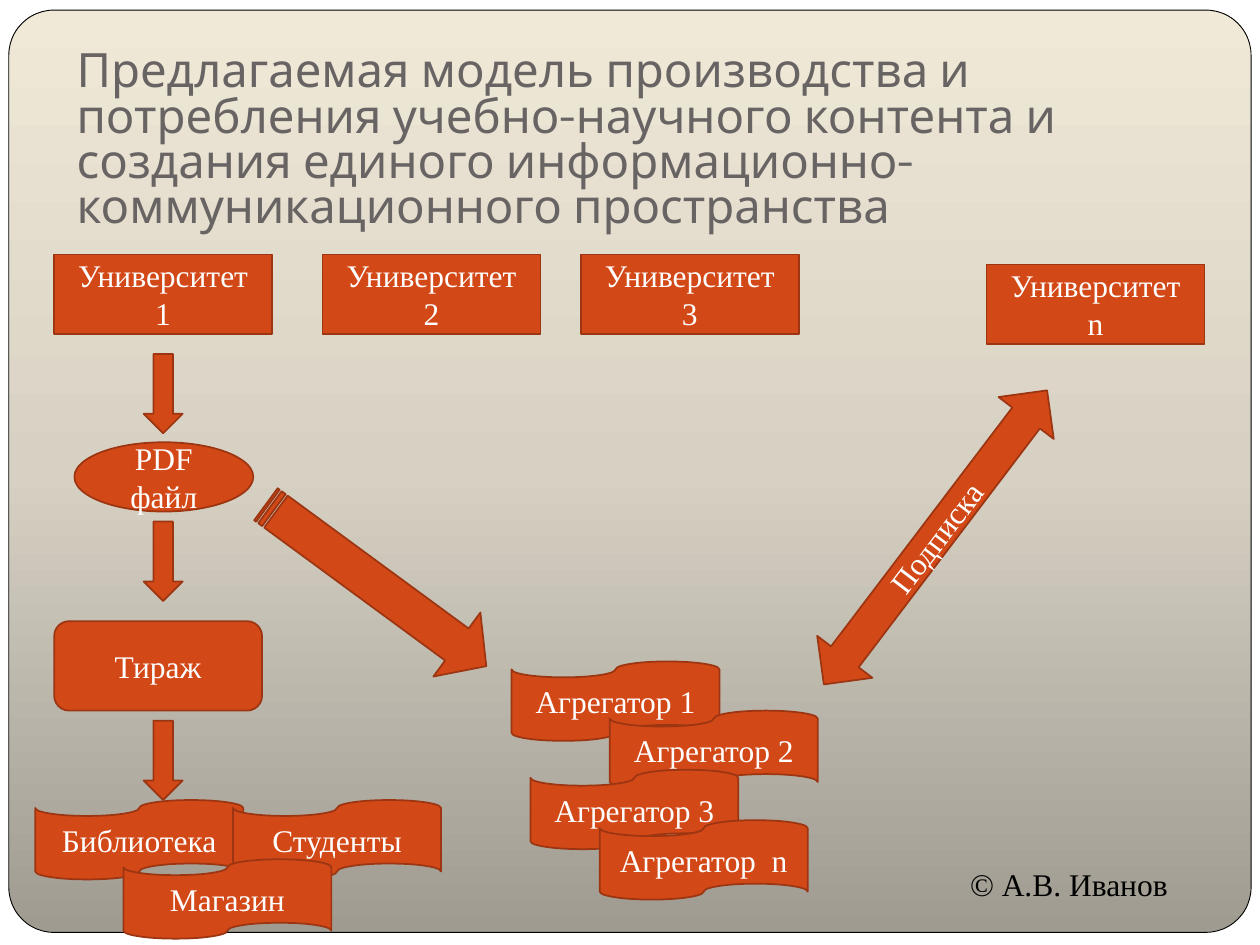
import copy

import pptx
import pptx.dml.color
import pptx.enum.shapes
import pptx.enum.text
import pptx.util

Inches = pptx.util.Inches
Kind = pptx.enum.shapes.MSO_SHAPE
Align = pptx.enum.text.PP_ALIGN
Anchor = pptx.enum.text.MSO_ANCHOR

ORANGE, RUST, WHITE = "D34817", "9C3511", "FFFFFF"
SERIF = {"name": "Times New Roman", "size": pptx.util.Pt(18)}
TITLE = {"name": "Karla", "size": pptx.util.Pt(27)}


def color(code):
    return pptx.dml.color.RGBColor.from_string(code)


def apply(target, values):
    for name, value in values.items():
        setattr(target, name, value)


def write(frame, text, font, code, para):
    frame.word_wrap = True
    first = frame.paragraphs[0]
    apply(first, para)
    run = first.add_run()
    run.text = text
    apply(run.font, font)
    run.font.color.rgb = color(code)


def block(slide, kind, box, text="", angle=0, adjust=()):
    shape = slide.shapes.add_shape(kind, *map(Inches, box))
    shape.shadow.inherit = False
    shape.rotation = angle
    for index, value in enumerate(adjust):
        shape.adjustments[index] = value
    shape.fill.solid()
    shape.fill.fore_color.rgb = color(ORANGE)
    shape.line.color.rgb = color(RUST)
    shape.line.width = pptx.util.Pt(1)
    if text:
        shape.text_frame.vertical_anchor = Anchor.MIDDLE
        write(shape.text_frame, text, SERIF, WHITE, {"alignment": Align.CENTER})
    return shape


def label(slide, box, text, font, code, para):
    frame = slide.shapes.add_textbox(*map(Inches, box)).text_frame
    write(frame, text, font, code, para)
    return frame


def panel(slide):
    shape = block(slide, Kind.ROUNDED_RECTANGLE, (0.07, 0.08, 9.86, 7.32), adjust=[0.049])
    apply(shape.line, {"width": pptx.util.Pt(0.5)})
    shape.line.color.rgb = color("000000")
    # Three stops, dark at the bottom
    fill = shape.fill
    fill.gradient()
    fill.gradient_angle = 90
    last = fill.gradient_stops[1]._gs
    last.addprevious(copy.deepcopy(last))
    stops = [(0, "9F9B91"), (0.5, "D7D1C4"), (1, "F0E9D8")]
    for stop, (place, code) in zip(fill.gradient_stops, stops):
        stop.position = place
        stop.color.rgb = color(code)


def main():
    deck = pptx.Presentation()
    apply(deck, {"slide_width": Inches(10), "slide_height": Inches(7.5)})
    slide = deck.slides.add_slide(deck.slide_layouts[6])

    # Backdrop and title
    panel(slide)
    label(slide, (0.51, 0.36, 9, 1.37),
          "Предлагаемая модель производства и потребления учебно-научного контента "
          "и создания единого информационно-коммуникационного пространства",
          TITLE, "696464", {"line_spacing": 0.8})

    # Universities
    for mark, left, top in [("1", 0.43, 2.02), ("2", 2.56, 2.02),
                            ("3", 4.61, 2.02), ("n", 7.83, 2.1)]:
        block(slide, Kind.FLOWCHART_PROCESS, (left, top, 1.73, 0.63),
              f"Университет {mark}")

    # Print chain
    block(slide, Kind.OVAL, (0.59, 3.51, 1.42, 0.55), "PDF файл")
    block(slide, Kind.FLOWCHART_ALTERNATE_PROCESS, (0.43, 4.93, 1.65, 0.71), "Тираж")

    # Readers and aggregators, overlapping in this order
    for text, left, top in [("Библиотека", 0.28, 6.35), ("Студенты", 1.85, 6.35),
                            ("Магазин", 0.98, 6.82), ("Агрегатор 1", 4.06, 5.25),
                            ("Агрегатор 2", 4.84, 5.64), ("Агрегатор 3", 4.21, 6.11),
                            ("Агрегатор  n", 4.76, 6.51)]:
        block(slide, Kind.FLOWCHART_PUNCHED_TAPE, (left, top, 1.65, 0.63), text)

    # Arrows
    for top in (2.81, 4.14, 5.72):
        block(slide, Kind.DOWN_ARROW, (1.14, top, 0.31, 0.63))
    block(slide, Kind.STRIPED_RIGHT_ARROW, (1.9, 4.33, 2.17, 0.63),
          angle=36.3, adjust=[0.5, 0.46])
    block(slide, Kind.LEFT_RIGHT_ARROW, (5.96, 3.99, 2.93, 0.55), "Подписка", 307.2)

    # Author
    note = label(slide, (7.6, 6.82, 1.81, 0.4), "© А.В. Иванов", SERIF, "000000", {})
    note.auto_size = pptx.enum.text.MSO_AUTO_SIZE.SHAPE_TO_FIT_TEXT

    deck.save("out.pptx")


if __name__ == "__main__":
    main()
